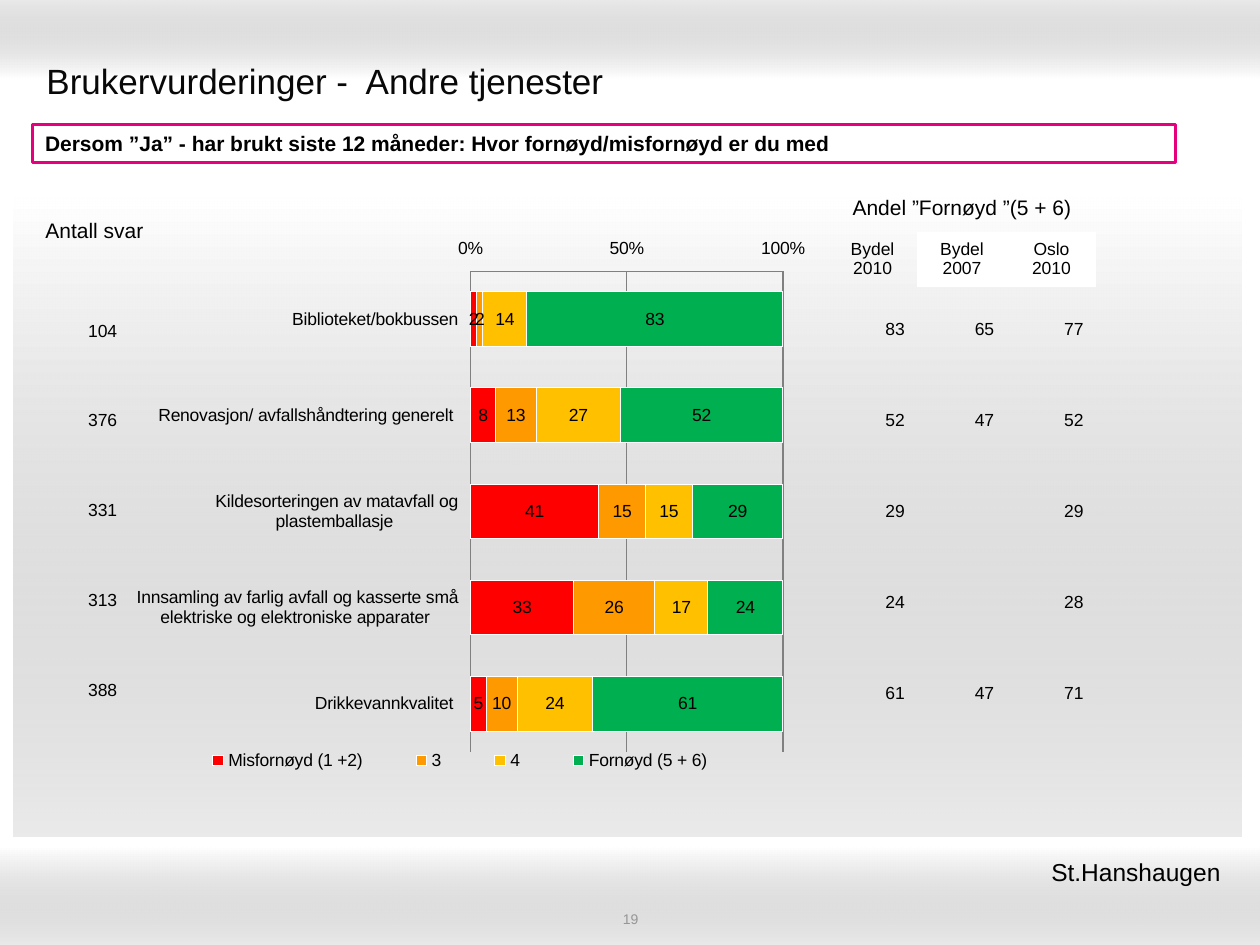
"""Build the slide on user ratings of other district services."""
import pptx
import pptx.chart.data
import pptx.dml.color
import pptx.enum.chart
import pptx.enum.shapes
import pptx.enum.text
import pptx.oxml
import pptx.oxml.ns
import pptx.util
from pptx.util import Inches

RGBColor = pptx.dml.color.RGBColor
BLACK = RGBColor(0x00, 0x00, 0x00)
WHITE = RGBColor(0xFF, 0xFF, 0xFF)
TITLE_COLOR = RGBColor(0x08, 0x08, 0x08)
NUMBER_GRAY = RGBColor(0x96, 0x96, 0x96)
BAND_GRAY = RGBColor(0x99, 0x99, 0x99)
GRID_GRAY = RGBColor(0x80, 0x80, 0x80)
PINK = RGBColor(0xE7, 0x00, 0x7E)
RED = RGBColor(0xFF, 0x00, 0x00)
ORANGE = RGBColor(0xFF, 0x99, 0x00)
YELLOW = RGBColor(0xFF, 0xC0, 0x00)
GREEN = RGBColor(0x00, 0xB0, 0x50)

ALIGN = pptx.enum.text.PP_ALIGN
ANCHOR = pptx.enum.text.MSO_ANCHOR
RECTANGLE = pptx.enum.shapes.MSO_SHAPE.RECTANGLE
NO_TABLE_STYLE = "{2D5ABB26-0587-4C30-8999-92F81FD0307C}"

SERVICES = [
    "Biblioteket/bokbussen",
    "Renovasjon/ avfallshåndtering generelt ",
    "Kildesorteringen av matavfall og plastemballasje ",
    "Innsamling av farlig avfall og kasserte små elektriske og elektroniske apparater ",
    "Drikkevannkvalitet ",
]
RATINGS = [
    ("Misfornøyd (1 +2)", RED, (2, 8, 41, 33, 5)),
    ("3", ORANGE, (2, 13, 15, 26, 10)),
    ("4", YELLOW, (14, 27, 15, 17, 24)),
    ("Fornøyd (5 + 6)", GREEN, (83, 52, 29, 24, 61)),
]
SATISFIED = [
    ("83", "65", "77"),
    ("52", "47", "52"),
    ("29", "", "29"),
    ("24", "", "28"),
    ("61", "47", "71"),
]
ANSWERS = [("104",), ("376",), ("331",), ("313",), ("388",)]
SATISFIED_HEADER = [
    ("Andel ”Fornøyd ”(5 + 6)", "", ""),
    ("Bydel\n2010", "Bydel\n2007", "Oslo\n2010"),
]


def style_font(font, size, color=BLACK, bold=False):
    """Set the slide's typeface with a size and colour."""
    font.name = "Arial"
    font.size = pptx.util.Pt(size)
    font.bold = bold
    font.color.rgb = color


def fill_text(frame, text, size, color=BLACK, align=ALIGN.LEFT, bold=False):
    """Write text into a frame, one paragraph per line."""
    frame.text = text
    for paragraph in frame.paragraphs:
        paragraph.alignment = align
        style_font(paragraph.font, size, color, bold)


def add_text(slide, box, text, size, color=BLACK, align=ALIGN.LEFT, anchor=ANCHOR.MIDDLE):
    """Add a wrapping text box."""
    frame = slide.shapes.add_textbox(*map(Inches, box)).text_frame
    frame.word_wrap = True
    frame.vertical_anchor = anchor
    fill_text(frame, text, size, color, align)


def add_band(slide, box, angle):
    """Add a rectangle that fades from white to translucent gray."""
    band = slide.shapes.add_shape(RECTANGLE, *map(Inches, box))
    band.shadow.inherit = False
    band.line.fill.background()
    band.fill.gradient()
    band.fill.gradient_angle = angle
    for stop, color, position in zip(band.fill.gradient_stops, (WHITE, BAND_GRAY), (0, 1)):
        stop.color.rgb = color
        stop.position = position
    gray = band.element.xpath(".//a:gs[2]/a:srgbClr")[0]
    gray.append(pptx.oxml.parse_xml(
        f'<a:alpha {pptx.oxml.ns.nsdecls("a")} val="20000"/>'))


def add_question(slide, box, text):
    """Add the framed survey question."""
    question = slide.shapes.add_shape(RECTANGLE, *map(Inches, box))
    question.shadow.inherit = False
    question.fill.solid()
    question.fill.fore_color.rgb = WHITE
    question.line.color.rgb = PINK
    question.line.width = pptx.util.Pt(2)
    question.text_frame.word_wrap = True
    fill_text(question.text_frame, text, 12, bold=True)


def add_figures(slide, box, rows, align, size=10):
    """Add an unstyled table with equal rows and columns."""
    table = slide.shapes.add_table(len(rows), len(rows[0]), *map(Inches, box)).table
    table.first_row = table.horz_banding = False
    table._tbl.tblPr.find(pptx.oxml.ns.qn("a:tableStyleId")).text = NO_TABLE_STYLE
    for row, texts in enumerate(rows):
        for column, text in enumerate(texts):
            cell = table.cell(row, column)
            cell.fill.background()
            cell.vertical_anchor = ANCHOR.MIDDLE
            fill_text(cell.text_frame, text, size, align=align)
    return table


def add_satisfied_header(slide):
    """Add the heading over the shares of satisfied users."""
    header = add_figures(slide, (6.57, 1.47, 2.13, 0.8), SATISFIED_HEADER, ALIGN.CENTER)
    header.rows[0].height = Inches(0.37)
    header.rows[1].height = Inches(0.43)
    header.cell(0, 0).merge(header.cell(0, 2))
    header.cell(0, 0).text_frame.paragraphs[0].font.size = pptx.util.Pt(12)
    for column in (1, 2):
        comparison = header.cell(1, column)
        comparison.fill.solid()
        comparison.fill.fore_color.rgb = WHITE


def place(part, x, y, w, h, inner=False):
    """Fix a chart part's layout as fractions of the chart."""
    for layout in part.findall(pptx.oxml.ns.qn("c:layout")):
        part.remove(layout)
    target = '<c:layoutTarget val="inner"/>' if inner else ""
    layout = pptx.oxml.parse_xml(
        f'<c:layout {pptx.oxml.ns.nsdecls("c")}><c:manualLayout>{target}'
        '<c:xMode val="edge"/><c:yMode val="edge"/>'
        f'<c:x val="{x}"/><c:y val="{y}"/><c:w val="{w}"/><c:h val="{h}"/>'
        '</c:manualLayout></c:layout>')
    part.insert(0 if inner else 1, layout)


def style_axes(chart):
    """Put the percent axis on top and the first service first."""
    services, percent = chart.category_axis, chart.value_axis
    services.reverse_order = True
    services.major_tick_mark = pptx.enum.chart.XL_TICK_MARK.NONE
    percent.minimum_scale, percent.maximum_scale, percent.major_unit = 0, 100, 50
    percent.major_tick_mark = pptx.enum.chart.XL_TICK_MARK.INSIDE
    percent.tick_labels.number_format = "General\\%"
    percent.tick_labels.number_format_is_linked = False
    percent.major_gridlines.format.line.color.rgb = GRID_GRAY
    for axis in (services, percent):
        axis.tick_label_position = pptx.enum.chart.XL_TICK_LABEL_POSITION.LOW
        axis.format.line.color.rgb = GRID_GRAY


def add_ratings_chart(slide, box):
    """Add the stacked bars of ratings per service."""
    ratings = pptx.chart.data.CategoryChartData(number_format="0")
    ratings.categories = SERVICES
    for name, _, values in RATINGS:
        ratings.add_series(name, values)
    chart = slide.shapes.add_chart(
        pptx.enum.chart.XL_CHART_TYPE.BAR_STACKED, *map(Inches, box), ratings).chart
    chart.has_title = False
    style_font(chart.font, 10)
    style_axes(chart)
    bars = chart.plots[0]
    bars.gap_width, bars.overlap, bars.vary_by_categories = 75, 100, False
    for series, (_, color, _) in zip(bars.series, RATINGS):
        series.format.fill.solid()
        series.format.fill.fore_color.rgb = color
        series.format.line.color.rgb = WHITE
        series.data_labels.show_value = True
        series.data_labels.number_format = "0"
        series.data_labels.number_format_is_linked = False
    chart.has_legend = True
    chart.legend.position = pptx.enum.chart.XL_LEGEND_POSITION.BOTTOM
    chart.legend.include_in_layout = False
    place(chart.legend._element, 0.06, 0.91, 0.85, 0.05)
    place(chart.element.xpath(".//c:plotArea")[0], 0.5, 0.08, 0.45, 0.84, inner=True)


def main():
    """Build and save the slide."""
    deck = pptx.Presentation()
    deck.slide_width, deck.slide_height = Inches(10), Inches(7.5)
    slide = deck.slides.add_slide(deck.slide_layouts[6])
    add_band(slide, (0, 0, 10, 0.62), 90)
    add_band(slide, (0, 6.72, 10, 0.78), 270)
    add_band(slide, (0.11, 1.56, 9.74, 5.08), 270)
    add_text(slide, (0.27, 0.36, 9.45, 0.55), "Brukervurderinger -  Andre tjenester", 20, TITLE_COLOR)
    add_text(slide, (3.42, 7.22, 3.17, 0.14), "19", 8, NUMBER_GRAY, ALIGN.CENTER)
    add_question(slide, (0.26, 0.99, 9.07, 0.3),
                 "Dersom ”Ja” - har brukt siste 12 måneder: Hvor fornøyd/misfornøyd er du med")
    add_ratings_chart(slide, (0.98, 1.79, 5.51, 4.54))
    add_figures(slide, (6.57, 2.25, 2.13, 3.62), SATISFIED, ALIGN.RIGHT)
    add_satisfied_header(slide)
    add_figures(slide, (0.51, 2.27, 0.52, 3.57), ANSWERS, ALIGN.RIGHT)
    add_figures(slide, (0.04, 1.54, 1.42, 0.59), [("Antall svar",)], ALIGN.CENTER, 12)
    add_text(slide, (6.1, 6.75, 3.74, 0.34), "St.Hanshaugen ", 14, align=ALIGN.RIGHT, anchor=ANCHOR.TOP)
    deck.save("out.pptx")


if __name__ == "__main__":
    main()
